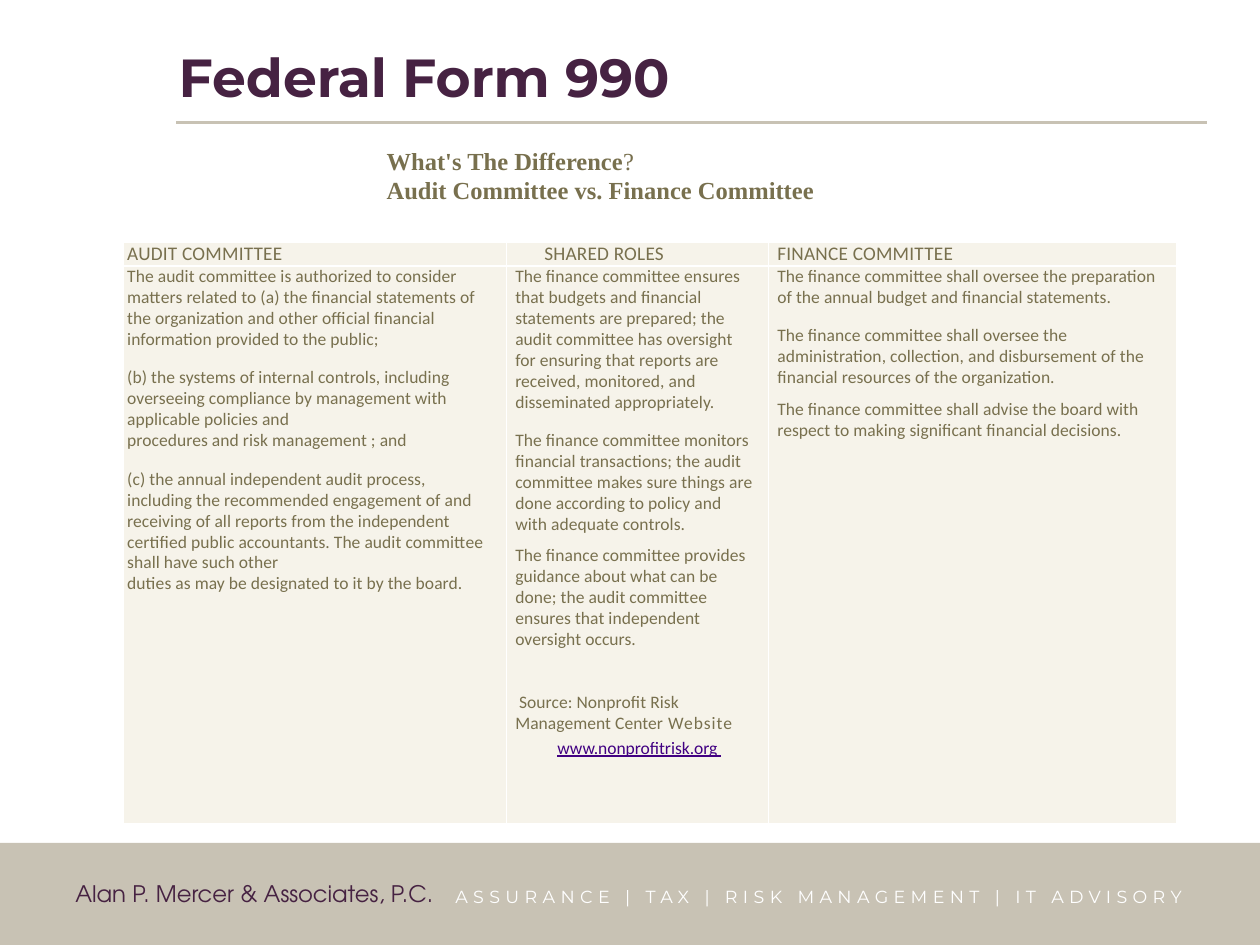
from lxml.etree import SubElement
from pptx import Presentation
from pptx.dml.color import RGBColor
from pptx.enum.shapes import MSO_CONNECTOR as Connector, MSO_SHAPE as Shape
from pptx.enum.text import MSO_ANCHOR as Anchor, MSO_AUTO_SIZE as AutoSize, PP_ALIGN as Align
from pptx.oxml.ns import qn
from pptx.util import Inches, Pt

PLUM, SAND, OLIVE, CREAM, WHITE, LINK = "462242", "C8C2B4", "78704E", "F6F3EA", "FFFFFF", "410082"
BODY = {"name": "Calibri", "size": Pt(10)}
HEADING = {"name": "Calibri", "size": Pt(11)}
SUBTITLE = {"name": "Times New Roman", "size": Pt(14), "bold": True}
BODY_SPACING, HEADING_SPACING = 0.06, 0.1


def color(value):
    return RGBColor.from_string(value)


def add_run(paragraph, text, font, fill, spacing=0):
    """Add text to a paragraph; spacing is the letter spacing in points."""
    run = paragraph.add_run()
    run.text = text
    for name, value in font.items():
        setattr(run.font, name, value)
    run.font.color.rgb = color(fill)
    if spacing:
        run.font._element.set("spc", str(round(spacing * 100)))


def set_indent(paragraph, left, first=0, right=0):
    properties = paragraph._p.get_or_add_pPr()
    for name, value in {"marL": left, "marR": right, "indent": first}.items():
        properties.set(name, str(Inches(value)))


def add_text_box(slide, left, top, width, height, anchor=Anchor.TOP, wrap=True):
    box = slide.shapes.add_textbox(Inches(left), Inches(top), Inches(width), Inches(height))
    frame = box.text_frame
    frame.auto_size = AutoSize.NONE
    frame.word_wrap = wrap
    frame.vertical_anchor = anchor
    return frame


def add_title(slide, left, top, width, height):
    frame = add_text_box(slide, left, top, width, height, Anchor.MIDDLE)
    font = {"name": "Montserrat", "size": Pt(30.6), "bold": True}
    add_run(frame.paragraphs[0], "Federal Form 990", font, PLUM)

    # Rule under the title
    y = Inches(top + height + 0.06)
    rule = slide.shapes.add_connector(
        Connector.STRAIGHT, Inches(left + 0.08), y, Inches(left + width + 0.08), y)
    rule.line.color.rgb = color(SAND)
    rule.line.width = Pt(1.75)
    SubElement(rule._element.spPr, qn("a:effectLst"))


def add_subtitle(slide, left, top, width, height):
    frame = add_text_box(slide, left, top, width, height, wrap=False)
    question = frame.paragraphs[0]
    add_run(question, "What's The Difference", SUBTITLE, OLIVE)
    add_run(question, "?", SUBTITLE | {"bold": False}, OLIVE)
    add_run(frame.add_paragraph(), "Audit Committee vs. Finance Committee", SUBTITLE, OLIVE)
    for paragraph in frame.paragraphs:
        set_indent(paragraph, 0, 0.5)


def add_footer(slide, left, top, width, height):
    band = slide.shapes.add_shape(
        Shape.RECTANGLE, Inches(left), Inches(top), Inches(width), Inches(height))
    band.shadow.inherit = False
    band.fill.solid()
    band.fill.fore_color.rgb = color(SAND)
    band.line.fill.background()

    # Firm name, then its services
    firm = add_text_box(slide, left + 0.69, top + 0.24, 3.14, 0.32)
    add_run(firm.paragraphs[0], "Alan P. Mercer & Associates, P.C.",
            {"name": "TeX Gyre Adventor", "size": Pt(13)}, PLUM)
    services = add_text_box(slide, left + 3.6, top + 0.29, 6.07, 0.27).paragraphs[0]
    services.alignment = Align.RIGHT
    add_run(services, "ASSURANCE | TAX | RISK MANAGEMENT | IT ADVISORY",
            {"name": "Montserrat", "size": Pt(10)}, WHITE, 3.1)


def style_cell(cell):
    for side in ("left", "right", "top", "bottom"):
        setattr(cell, f"margin_{side}", 0)
    properties = cell._tc.get_or_add_tcPr()
    for tag in ("a:lnL", "a:lnR", "a:lnT", "a:lnB"):
        border = SubElement(properties, qn(tag), w=str(Pt(1)))
        SubElement(SubElement(border, qn("a:solidFill")), qn("a:srgbClr"), val=WHITE)
    cell.fill.solid()
    cell.fill.fore_color.rgb = color(CREAM)


def add_source(frame, indent):
    citation = frame.add_paragraph()
    set_indent(citation, indent, 0.03)
    citation.line_spacing = Pt(12)
    citation.space_before = Pt(24)
    add_run(citation, "Source: Nonprofit Risk Management Center", BODY, OLIVE, BODY_SPACING)
    add_run(citation, " Website", BODY, OLIVE, 0.6)

    address = frame.add_paragraph()
    set_indent(address, 0.03)
    address.alignment = Align.CENTER
    address.line_spacing = 1.15
    underlined = BODY | {"underline": True}
    add_run(address, "www.nonprofitrisk.org", underlined, LINK)
    add_run(address, " ", underlined, LINK, 2)


def add_roles_table(slide, left, top, columns, rows):
    """Each role is a heading, its indent, the body indent and (space before, text) pairs."""
    table = slide.shapes.add_table(
        len(rows), len(columns), Inches(left), Inches(top),
        Inches(sum(columns)), Inches(sum(rows))).table
    table.first_row = table.horz_banding = False
    for row, height in zip(table.rows, rows):
        row.height = Inches(height)

    for index, (heading, heading_indent, body_indent, body) in enumerate(ROLES):
        table.columns[index].width = Inches(columns[index])
        heading_cell, body_cell = table.cell(0, index), table.cell(1, index)
        style_cell(heading_cell)
        style_cell(body_cell)

        paragraph = heading_cell.text_frame.paragraphs[0]
        set_indent(paragraph, heading_indent)
        paragraph.line_spacing = Pt(13.6)
        add_run(paragraph, heading, HEADING, OLIVE, HEADING_SPACING)

        frame = body_cell.text_frame
        for number, (before, text) in enumerate(body):
            paragraph = frame.add_paragraph() if number else frame.paragraphs[0]
            set_indent(paragraph, body_indent, right=0.11)
            paragraph.line_spacing = Pt(12)
            paragraph.space_before = Pt(before)
            add_run(paragraph, text, BODY, OLIVE, BODY_SPACING)
        if heading == "SHARED ROLES":
            add_source(frame, body_indent)


ROLES = [
    ("AUDIT COMMITTEE", 0.03, 0.03, [
        (0, "The audit committee is authorized to consider matters related to (a) the financial "
            "statements of the organization and other official financial information provided "
            "to the public;"),
        (10, "(b) the systems of internal controls, including overseeing compliance by "
             "management with applicable policies and"),
        (0, "procedures and risk management ; and"),
        (10, "(c) the annual independent audit process, including the recommended engagement of "
             "and receiving of all reports from the independent certified public accountants. "
             "The audit committee shall have such other"),
        (0, "duties as may be designated to it by the board."),
    ]),
    ("SHARED ROLES", 0.3, 0.07, [
        (0, "The finance committee ensures that budgets and financial statements are prepared; "
            "the audit committee has oversight for ensuring that reports are received, "
            "monitored, and disseminated appropriately."),
        (10, "The finance committee monitors financial transactions; the audit committee makes "
             "sure things are done according to policy and with adequate controls."),
        (6, "The finance committee provides guidance about what can be done; the audit "
            "committee ensures that independent oversight occurs."),
    ]),
    ("FINANCE COMMITTEE", 0.07, 0.07, [
        (0, "The finance committee shall oversee the preparation of the annual budget and "
            "financial statements."),
        (10, "The finance committee shall oversee the administration, collection, and "
             "disbursement of the financial resources of the organization."),
        (6, "The finance committee shall advise the board with respect to making significant "
            "financial decisions."),
    ]),
]


def main():
    presentation = Presentation()
    presentation.slide_width, presentation.slide_height = Inches(10), Inches(7.5)
    slide = presentation.slides.add_slide(presentation.slide_layouts[6])
    add_footer(slide, -0.19, 6.69, 10.44, 1.06)
    add_title(slide, 1.32, 0.3, 8.18, 0.61)
    add_roles_table(slide, 0.98, 1.92, columns=(3.04, 2.08, 3.24), rows=(0.19, 4.43))
    add_subtitle(slide, 2.47, 1.11, 4.12, 0.55)
    presentation.save("out.pptx")


if __name__ == "__main__":
    main()
